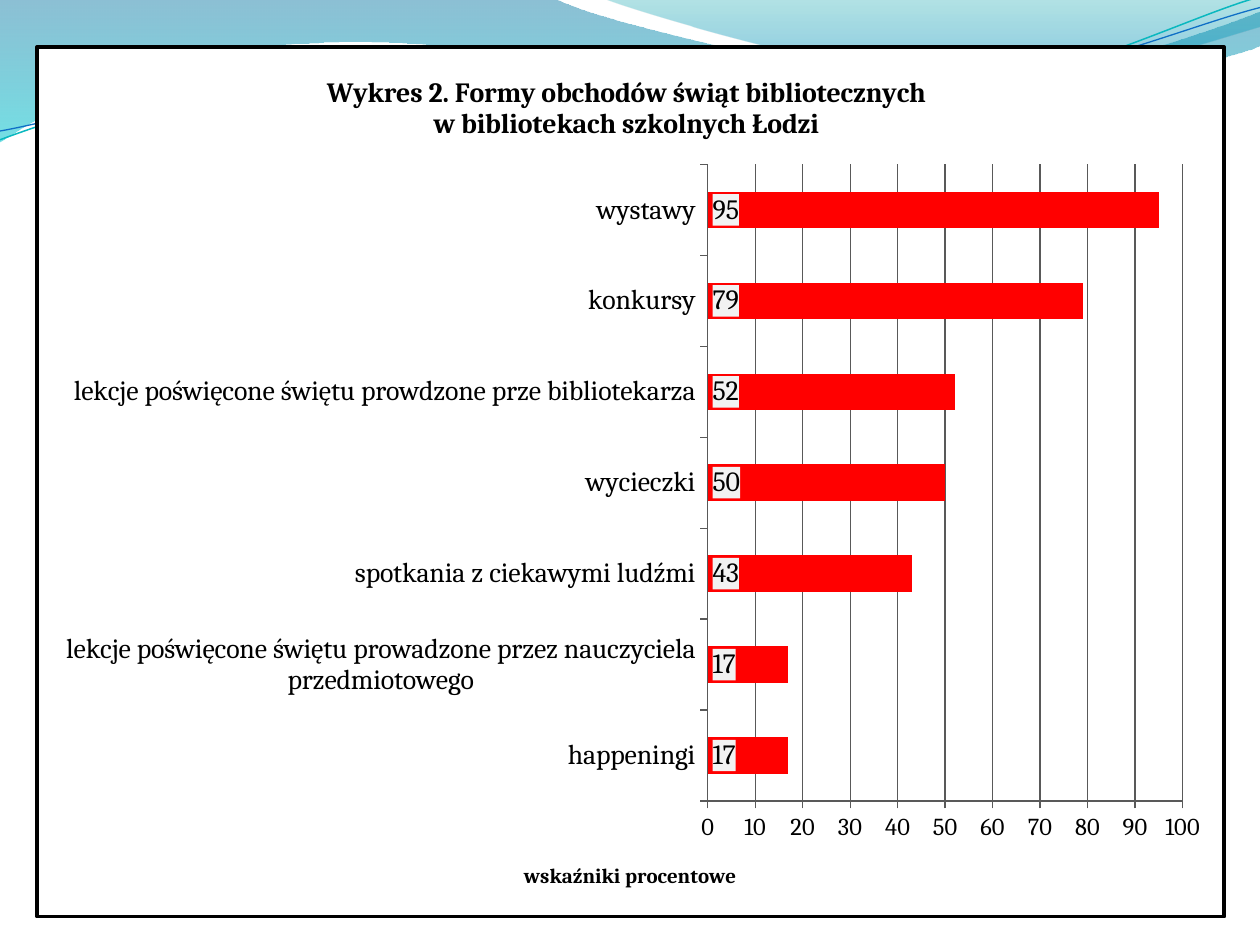
from typing import NamedTuple, Optional

from pptx import Presentation
from pptx.chart.data import CategoryChartData
from pptx.dml.color import RGBColor
from pptx.enum.chart import XL_CHART_TYPE as ChartType
from pptx.enum.chart import XL_LABEL_POSITION as LabelPosition
from pptx.enum.chart import XL_TICK_MARK as TickMark
from pptx.oxml import parse_xml
from pptx.oxml.ns import nsdecls, qn
from pptx.util import Inches, Pt

COLORS = {
    "deep blue": "0074A1", "cyan": "00C6CF", "teal": "00A1A9", "sky": "008BBF",
    "teal line": "0AB8BF", "blue line": "0F6FC6", "black": "000000",
    "white": "FFFFFF", "bar": "FF0000", "label": "F2F2F2", "grid": "595959",
}
FONT = "Cambria"


class Stop(NamedTuple):
    position: float
    color: str
    alpha: int  # percent


class Wave(NamedTuple):
    start: tuple
    segments: list  # 2 numbers: straight line, 6 numbers: Bezier curve
    stops: tuple = ()
    line: Optional[str] = None
    width: float = 0


WAVES = [
    Wave((0, 0), [
        (4.4, -0.01), (4.76, 0.17, 6.64, 0.63, 7.58, 0.63),
        (8.53, 0.63, 9.58, 0.26, 10, 0.09), (10.01, 0.36),
        (9.83, 0.44, 8.7, 0.76, 7.46, 0.75), (6.22, 0.75, 3.82, 0.28, 2.57, 0.34),
        (1.29, 0.36, 0.46, 0.83, -0.01, 1.13)],
        stops=(Stop(0, "deep blue", 45), Stop(1, "cyan", 55))),
    Wave((4.79, -0.01), [
        (5.09, 0.11, 6.82, 0.62, 7.69, 0.65),
        (8.56, 0.69, 9.61, 0.32, 10, 0.21), (10, 0)],
        stops=(Stop(0, "teal", 30), Stop(0.8, "sky", 45))),
    Wave((0, 1.11), [
        (0.48, 0.93, 1.58, 0.57, 2.77, 0.52), (3.95, 0.47, 5.93, 0.89, 7.13, 0.8),
        (8.33, 0.71, 9.38, 0.15, 9.98, -0.02)], line="teal line", width=0.85),
    Wave((0, 1.04), [
        (0.47, 0.96, 1.64, 0.61, 2.83, 0.56), (4.03, 0.51, 5.97, 0.84, 7.17, 0.75),
        (8.36, 0.67, 9.41, 0.21, 10, 0.06)], line="blue line", width=0.75),
]

CELEBRATIONS = {
    "happeningi": 17,
    "lekcje poświęcone świętu prowadzone przez nauczyciela przedmiotowego": 17,
    "spotkania z ciekawymi ludźmi": 43,
    "wycieczki": 50,
    "lekcje poświęcone świętu prowdzone prze bibliotekarza": 52,
    "konkursy": 79,
    "wystawy": 95,
}
TITLE_LINES = ["Wykres 2. Formy obchodów świąt bibliotecznych",
               "w bibliotekach szkolnych Łodzi"]


def rgb(name: str) -> RGBColor:
    return RGBColor.from_string(COLORS[name])


def bend(shape, segments: list) -> None:
    """Replace the straight pieces of a freeform by curves where needed."""
    for straight, segment in zip(shape.element.xpath(".//a:lnTo"), segments):
        if len(segment) == 2:
            continue
        points = "".join(
            f'<a:pt x="{Inches(x) - shape.left}" y="{Inches(y) - shape.top}"/>'
            for x, y in zip(segment[::2], segment[1::2]))
        straight.addprevious(parse_xml(
            f'<a:cubicBezTo {nsdecls("a")}>{points}</a:cubicBezTo>'))
        straight.getparent().remove(straight)


def draw_wave(slide, wave: Wave) -> None:
    x, y = wave.start
    builder = slide.shapes.build_freeform(Inches(x), Inches(y))
    ends = [(Inches(segment[-2]), Inches(segment[-1])) for segment in wave.segments]
    builder.add_line_segments(ends, close=bool(wave.stops))
    shape = builder.convert_to_shape()
    bend(shape, wave.segments)
    shape.shadow.inherit = False
    if wave.line:
        shape.fill.background()
        shape.line.color.rgb = rgb(wave.line)
        shape.line.width = Pt(wave.width)
        return
    shape.line.fill.background()
    shape.fill.gradient()
    shape.fill.gradient_angle = 270
    for gradient_stop, stop in zip(shape.fill.gradient_stops, wave.stops):
        gradient_stop.position = stop.position
        gradient_stop.color.rgb = rgb(stop.color)
    for color, stop in zip(shape.element.xpath(".//a:gs/a:srgbClr"), wave.stops):
        color.append(parse_xml(f'<a:alpha {nsdecls("a")} val="{stop.alpha * 1000}"/>'))


def set_font(font, size: float, bold: bool = False) -> None:
    font.name, font.size, font.bold = FONT, Pt(size), bold
    font.color.rgb = rgb("black")


def set_line(line) -> None:
    line.color.rgb = rgb("grid")
    line.width = Pt(0.75)


def write_lines(frame, lines: list, size: float) -> None:
    for index, line in enumerate(lines):
        paragraph = frame.add_paragraph() if index else frame.paragraphs[0]
        run = paragraph.add_run()
        run.text = line
        set_font(run.font, size, bold=True)


def place(part, inner: bool = False, **fractions: float) -> None:
    """Give a chart part a manual layout, in fractions of the chart."""
    for old in part.findall(qn("c:layout")):
        part.remove(old)
    target = '<c:layoutTarget val="inner"/>' if inner else ""
    modes = "".join(f'<c:{key}Mode val="edge"/>' for key in "xy")
    values = "".join(f'<c:{key} val="{value}"/>' for key, value in fractions.items())
    layout = parse_xml(f'<c:layout {nsdecls("c")}><c:manualLayout>{target}{modes}'
                       f'{values}</c:manualLayout></c:layout>')
    text = part.find(qn("c:tx"))
    if text is None:
        part.insert(0, layout)
    else:
        text.addnext(layout)


def box_format(fill: str, line: str = "", width: float = 0):
    border = (f'<a:ln w="{Pt(width)}"><a:solidFill><a:srgbClr val="{COLORS[line]}"/>'
              '</a:solidFill></a:ln>') if line else ""
    return parse_xml(f'<c:spPr {nsdecls("c", "a")}><a:solidFill><a:srgbClr '
                     f'val="{COLORS[fill]}"/></a:solidFill>{border}</c:spPr>')


def draw_chart(slide) -> None:
    data = CategoryChartData()
    data.categories = list(CELEBRATIONS)
    data.add_series("Series 1", list(CELEBRATIONS.values()))
    chart = slide.shapes.add_chart(
        ChartType.BAR_CLUSTERED, Inches(0.28), Inches(0.36),
        Inches(9.45), Inches(6.93), data).chart
    set_font(chart.font, 14)
    chart.has_legend = False
    chart.has_title = True
    write_lines(chart.chart_title.text_frame, TITLE_LINES, 16)
    chart.chart_title.include_in_layout = False

    # Axes
    forms, percent = chart.category_axis, chart.value_axis
    for axis, size in ((forms, 16), (percent, 14)):
        set_font(axis.tick_labels.font, size)
        axis.major_tick_mark = TickMark.OUTSIDE
        set_line(axis.format.line)
    forms.has_major_gridlines = False
    percent.minimum_scale, percent.maximum_scale, percent.major_unit = 0, 100, 10
    percent.has_major_gridlines = True
    set_line(percent.major_gridlines.format.line)
    write_lines(percent.axis_title.text_frame, ["wskaźniki procentowe"], 12)

    # Bars and their value labels
    plot = chart.plots[0]
    plot.gap_width = 150
    plot.vary_by_categories = False
    bars = plot.series[0]
    bars.format.fill.solid()
    bars.format.fill.fore_color.rgb = rgb("bar")
    labels = bars.data_labels
    labels.show_value = True
    labels.position = LabelPosition.INSIDE_BASE
    set_font(labels.font, 16)

    # Boxes and positions
    root = chart.element
    root.xpath(".//c:ser/c:dLbls/c:txPr")[0].addprevious(box_format("label"))
    root.find(qn("c:chart")).addnext(box_format("white", "black", 2))
    place(root.xpath("c:chart/c:title")[0], x=0.241, y=0.028)
    place(root.xpath(".//c:valAx/c:title")[0], x=0.407, y=0.934)
    place(root.xpath(".//c:plotArea")[0], inner=True, x=0.565, y=0.135, w=0.4, h=0.732)


def main() -> None:
    deck = Presentation()
    deck.slide_width, deck.slide_height = Inches(10), Inches(7.5)
    slide = deck.slides.add_slide(deck.slide_layouts[6])
    for wave in WAVES:
        draw_wave(slide, wave)
    draw_chart(slide)
    deck.save("out.pptx")


if __name__ == "__main__":
    main()
